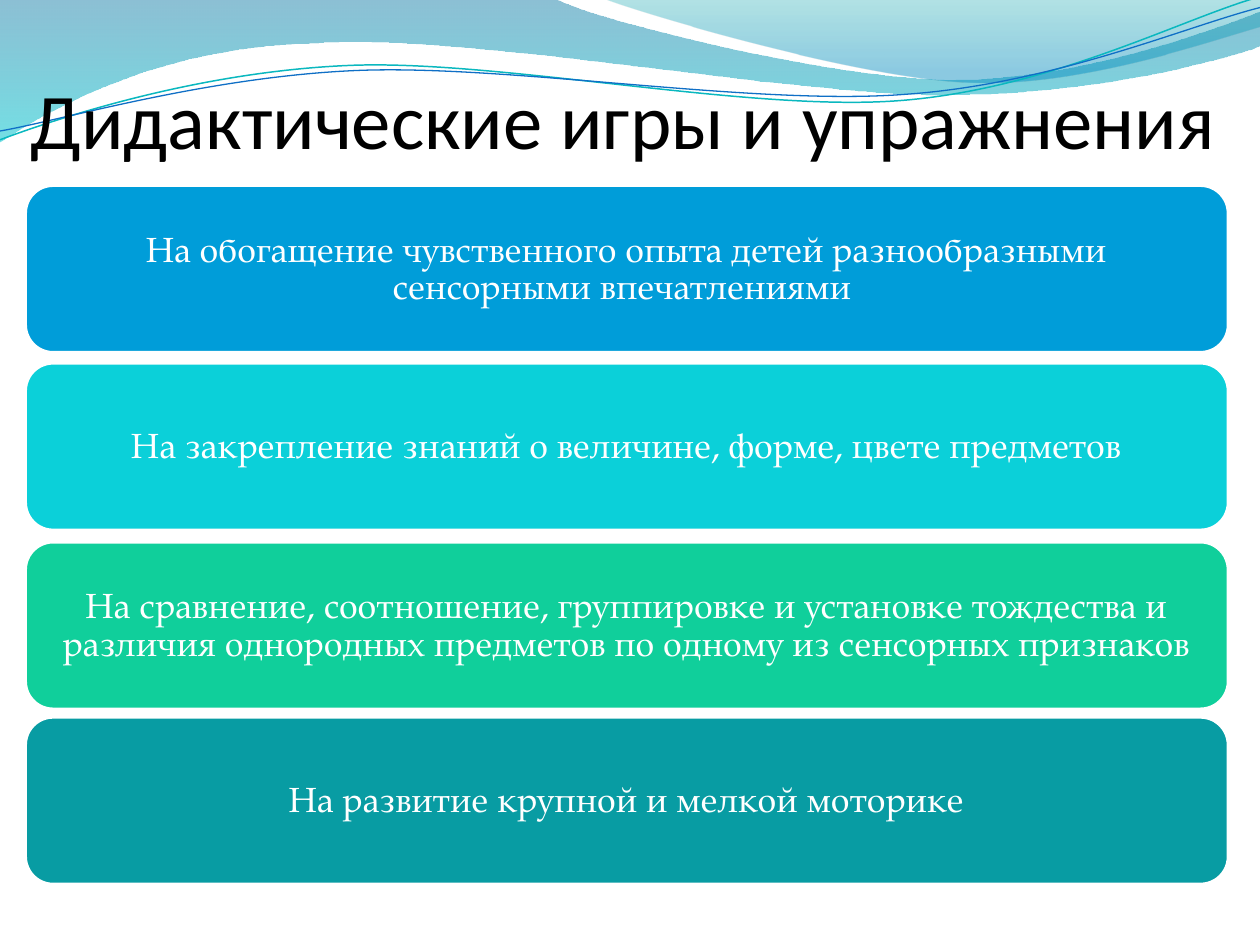
from lxml.etree import SubElement
from pptx import Presentation
from pptx.dml.color import RGBColor
from pptx.enum.shapes import MSO_SHAPE
from pptx.enum.text import MSO_ANCHOR, PP_ALIGN
from pptx.oxml.ns import qn
from pptx.util import Inches, Pt

COLORS = {
    "white": "FFFFFF", "black": "000000",
    "deep_blue": "0074A1", "aqua": "00C6CF",
    "sea_green": "00A1A9", "sky_blue": "008BBF",
    "teal_line": "0AB8BF", "blue_line": "0F6FC6",
    "blue": "009DD9", "cyan": "0BD0D9", "green": "10CF9B", "teal": "089CA3",
}

WAVE_FILLS = [
    ([(0, 0), (4.4, -0.01),
      (4.76, 0.17, 6.64, 0.63, 7.58, 0.63), (8.53, 0.63, 9.58, 0.26, 10, 0.09),
      (10.01, 0.36),
      (9.83, 0.44, 8.7, 0.76, 7.46, 0.75), (6.22, 0.75, 3.82, 0.28, 2.57, 0.34),
      (1.29, 0.36, 0.46, 0.83, -0.01, 1.13), (0, 0)],
     [(0, "deep_blue", 45), (1, "aqua", 55)]),
    ([(4.79, -0.01),
      (5.09, 0.11, 6.82, 0.62, 7.69, 0.65), (8.56, 0.69, 9.61, 0.32, 10, 0.21),
      (10, 0), (4.79, -0.01)],
     [(0, "sea_green", 30), (0.8, "sky_blue", 45)]),
]
WAVE_LINES = [
    ([(0, 1.11),
      (0.48, 0.93, 1.58, 0.57, 2.77, 0.52), (3.95, 0.47, 5.93, 0.89, 7.13, 0.8),
      (8.33, 0.71, 9.38, 0.15, 9.98, -0.02)], "teal_line", 0.85),
    ([(0, 1.04),
      (0.47, 0.96, 1.64, 0.61, 2.83, 0.56), (4.03, 0.51, 5.97, 0.84, 7.17, 0.75),
      (8.36, 0.67, 9.41, 0.21, 10, 0.06)], "blue_line", 0.75),
]
EXERCISES = [
    (1.47, "blue", "На обогащение чувственного опыта детей разнообразными сенсорными впечатлениями "),
    (2.88, "cyan", "На закрепление знаний о величине, форме, цвете предметов"),
    (4.3, "green", "На сравнение, соотношение, группировке и установке тождества и различия "
                   "однородных предметов по одному из сенсорных признаков"),
    (5.69, "teal", "На развитие крупной и мелкой моторике"),
]


def rgb(name):
    """Return the named colour."""
    return RGBColor.from_string(COLORS[name])


def add_curve(slide, segments, close):
    """Add a freeform of straight (one point) and cubic (three point) segments."""
    points = [(Inches(x), Inches(y))
              for segment in segments for x, y in zip(segment[::2], segment[1::2])]
    builder = slide.shapes.build_freeform(*points[0])
    builder.add_line_segments(points[1:], close=close)
    shape = builder.convert_to_shape()
    shape.shadow.inherit = False
    lines = iter(list(shape.element.iter(qn("a:lnTo"))))
    for segment in segments[1:]:
        line = next(lines)
        if len(segment) == 6:
            line.tag = qn("a:cubicBezTo")
            for _ in range(2):
                merged = next(lines)
                line.append(merged[0])
                merged.getparent().remove(merged)
    return shape


def add_wave_fill(slide, segments, stops):
    """Add a translucent wave shaded from top to bottom."""
    shape = add_curve(slide, segments, close=True)
    shape.line.fill.background()
    shape.fill.gradient()
    shape.fill.gradient_angle = 270
    for stop, (position, color, opacity) in zip(shape.fill.gradient_stops, stops):
        stop.position = position
        stop.color.rgb = rgb(color)
    color_elements = shape.element.spPr.iter(qn("a:srgbClr"))
    for element, (position, color, opacity) in zip(color_elements, stops):
        SubElement(element, qn("a:alpha"), val=str(opacity * 1000))


def add_wave_line(slide, segments, color, width):
    """Add a thin wavy line."""
    shape = add_curve(slide, segments, close=False)
    shape.fill.background()
    shape.line.color.rgb = rgb(color)
    shape.line.width = Pt(width)


def add_waves(slide):
    """Add the header of waves."""
    for segments, stops in WAVE_FILLS:
        add_wave_fill(slide, segments, stops)
    for segments, color, width in WAVE_LINES:
        add_wave_line(slide, segments, color, width)


def add_text(slide, box, text, font_name, size, color, anchor, insets):
    """Add a text box with one centred paragraph."""
    frame = slide.shapes.add_textbox(*map(Inches, box)).text_frame
    frame.word_wrap = True
    frame.vertical_anchor = anchor
    frame.margin_left, frame.margin_top, frame.margin_right, frame.margin_bottom = map(Inches, insets)
    paragraph = frame.paragraphs[0]
    paragraph.text = text
    paragraph.alignment = PP_ALIGN.CENTER
    paragraph.font.name = font_name
    paragraph.font.size = Pt(size)
    paragraph.font.color.rgb = rgb(color)
    return paragraph


def add_title(slide, box):
    """Add the slide title."""
    add_text(slide, box, "Дидактические игры и упражнения", "Calibri", 45, "black",
             MSO_ANCHOR.BOTTOM, (0, 0.05, 0, 0))


def add_exercise(slide, box, color, text):
    """Add one rounded panel with its text."""
    panel = slide.shapes.add_shape(MSO_SHAPE.ROUNDED_RECTANGLE, *map(Inches, box))
    panel.shadow.inherit = False
    panel.fill.solid()
    panel.fill.fore_color.rgb = rgb(color)
    panel.line.color.rgb = rgb("white")
    panel.line.width = Pt(2)
    left, top, width, height = box
    text_box = (left + 0.06, top + 0.07, width - 0.13, height - 0.13)
    paragraph = add_text(slide, text_box, text, "TeX Gyre Pagella", 20, "white",
                         MSO_ANCHOR.MIDDLE, (0.08,) * 4)
    paragraph.line_spacing = 0.9


def main():
    """Build and save the slide."""
    presentation = Presentation()
    presentation.slide_width = Inches(10)
    presentation.slide_height = Inches(7.5)
    slide = presentation.slides.add_slide(presentation.slide_layouts[6])
    add_waves(slide)
    add_title(slide, (0.2, 0.44, 9.49, 0.87))
    for top, color, text in EXERCISES:
        add_exercise(slide, (0.2, top, 9.55, 1.33), color, text)
    presentation.save("out.pptx")


if __name__ == "__main__":
    main()
